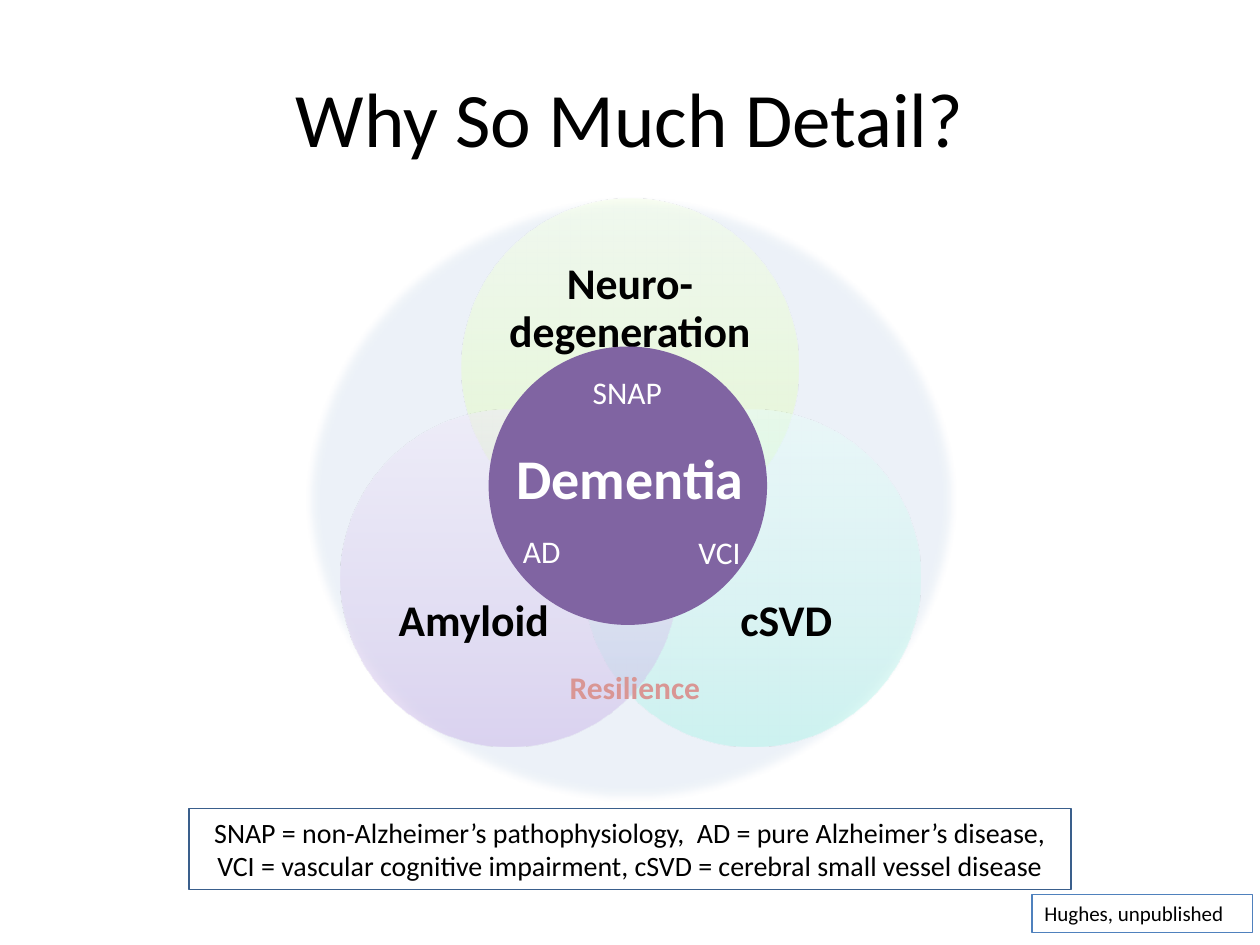
import pptx
import pptx.dml.color
import pptx.enum.shapes
import pptx.enum.text
import pptx.oxml
import pptx.oxml.ns
import pptx.util

Pt = pptx.util.Pt
RGB = pptx.dml.color.RGBColor.from_string
SHAPE = pptx.enum.shapes.MSO_SHAPE
ANCHOR = pptx.enum.text.MSO_ANCHOR
ALIGN = pptx.enum.text.PP_ALIGN
FIT = pptx.enum.text.MSO_AUTO_SIZE
NS = pptx.oxml.ns.nsdecls("a")

COLORS = {
    "black": "000000",
    "white": "FFFFFF",
    "blue": "4F81BD",
    "navy": "3A5F8C",
    "purple": "8064A2",
    "rose": "D99694",
}
GRADIENTS = {
    "green": ("DAFDA7", "E4FCC2", "F5FFE7"),
    "teal": ("AEF3E9", "C6F5EE", "E8FCF9"),
    "violet": ("C9B5E8", "D8CBEE", "F0EAF9"),
}


class Deck:
    """Holds the text style and the current slide, and adds elements to it."""

    font = {"name": "Calibri", "bold": False}
    para = {"alignment": ALIGN.CENTER}
    frame = {"word_wrap": True, "auto_size": FIT.NONE, "vertical_anchor": ANCHOR.TOP}
    grow = {"auto_size": FIT.SHAPE_TO_FIT_TEXT}
    middle = {"vertical_anchor": ANCHOR.MIDDLE}

    def __init__(self, width, height):
        self.prs = pptx.Presentation()
        self.prs.slide_width, self.prs.slide_height = Pt(width), Pt(height)
        self.s = self.prs.slides.add_slide(self.prs.slide_layouts[6])

    def apply(self, target, values):
        for name, value in values.items():
            setattr(target, name, value)

    def fill_text(self, sp, lines, size, color="black", bold=False, frame=None, para=None):
        tf = sp.text_frame
        self.apply(tf, {**self.frame, **(frame or {})})
        for i, line in enumerate(lines):
            p = tf.add_paragraph() if i else tf.paragraphs[0]
            self.apply(p, {**self.para, **(para or {})})
            r = p.add_run()
            r.text = line
            self.apply(r.font, {**self.font, "size": Pt(size), "bold": bold})
            r.font.color.rgb = RGB(COLORS[color])

    def text(self, box, lines, size, **style):
        sp = self.s.shapes.add_textbox(*map(Pt, box))
        self.fill_text(sp, lines, size, **style)

    def label(self, box, lines, size, color="black", top=0, bottom=0):
        margins = {"margin_left": 0, "margin_right": 0,
                   "margin_top": Pt(top), "margin_bottom": Pt(bottom)}
        self.text(box, lines, size, color=color, bold=True,
                  frame={**self.middle, **margins}, para={"line_spacing": 0.9})

    def ellipse(self, box, color=None):
        sp = self.s.shapes.add_shape(SHAPE.OVAL, *map(Pt, box))
        sp.shadow.inherit = False
        sp.line.fill.background()
        if color:
            sp.fill.solid()
            sp.fill.fore_color.rgb = RGB(COLORS[color])
        return sp

    def halo(self, box, color, alpha, blur):
        sp = self.ellipse(box, color)
        pr = sp.element.spPr
        rgb = pr.find(".//" + pptx.oxml.ns.qn("a:srgbClr"))
        rgb.append(pptx.oxml.parse_xml(f'<a:alpha {NS} val="{alpha * 1000}"/>'))
        effects = pr.find(pptx.oxml.ns.qn("a:effectLst"))
        effects.append(pptx.oxml.parse_xml(f'<a:softEdge {NS} rad="{Pt(blur)}"/>'))

    def gradient_circle(self, left, top, size, name):
        sp = self.ellipse((left, top, size, size))
        stops = "".join(
            f'<a:gs pos="{pos * 1000}"><a:srgbClr val="{c}"><a:alpha val="50000"/></a:srgbClr></a:gs>'
            for pos, c in zip((0, 35, 100), GRADIENTS[name]))
        fill = pptx.oxml.parse_xml(
            f'<a:gradFill {NS} rotWithShape="1"><a:gsLst>{stops}</a:gsLst>'
            '<a:lin ang="16200000" scaled="0"/></a:gradFill>')
        sp.element.spPr.find(pptx.oxml.ns.qn("a:prstGeom")).addnext(fill)

    def note(self, box, line, size, border, align):
        sp = self.s.shapes.add_shape(SHAPE.RECTANGLE, *map(Pt, box))
        sp.shadow.inherit = False
        sp.fill.background()
        sp.line.color.rgb = RGB(COLORS[border])
        sp.line.width = Pt(0.75)
        self.fill_text(sp, [line], size, frame=self.grow, para={"alignment": align})


def main():
    d = Deck(720, 540)
    d.halo((174.2, 111.6, 373.7, 347.8), "blue", 10, 5)

    circle = 192.5
    d.gradient_circle(264, 113.5, circle, "green")
    d.label((289.4, 147.6, 141.1, 86.4), ["Neuro-", "degeneration"], 25, bottom=28)
    for left, text_left, name, line in ((333.5, 391.7, "teal", "cSVD"),
                                        (194.5, 213.1, "violet", "Amyloid")):
        d.gradient_circle(left, 234, circle, name)
        d.label((text_left, 283.7, 115.2, 105.8), [line], 25, top=38)

    d.ellipse((279.2, 198, 159.1, 159.1), "purple")
    d.label((286.6, 213.8, 146.9, 122.4), ["Dementia"], 32, "white")
    for left, top, line in ((325.4, 209.5, "SNAP"), (276.5, 300.2, "AD"), (378, 301, "VCI")):
        d.text((left, top, 66.2, 29), [line], 18, color="white", frame=d.grow)

    d.note((108, 462.2, 504, 46), "SNAP = non-Alzheimer’s pathophysiology,  AD = pure Alzheimer’s disease, "
           "VCI = vascular cognitive impairment, cSVD = cerebral small vessel disease",
           16, "navy", ALIGN.CENTER)
    d.text((318.2, 378, 89.3, 29), ["Resilience"], 18, color="rose", bold=True,
           frame={**d.grow, "word_wrap": False})
    d.text((36, 21.6, 648, 90), ["Why So Much Detail?"], 44, frame=d.middle)
    d.note((589.7, 511.2, 126, 21.8), "Hughes, unpublished", 12, "blue", ALIGN.LEFT)
    d.prs.save("out.pptx")


if __name__ == "__main__":
    main()
